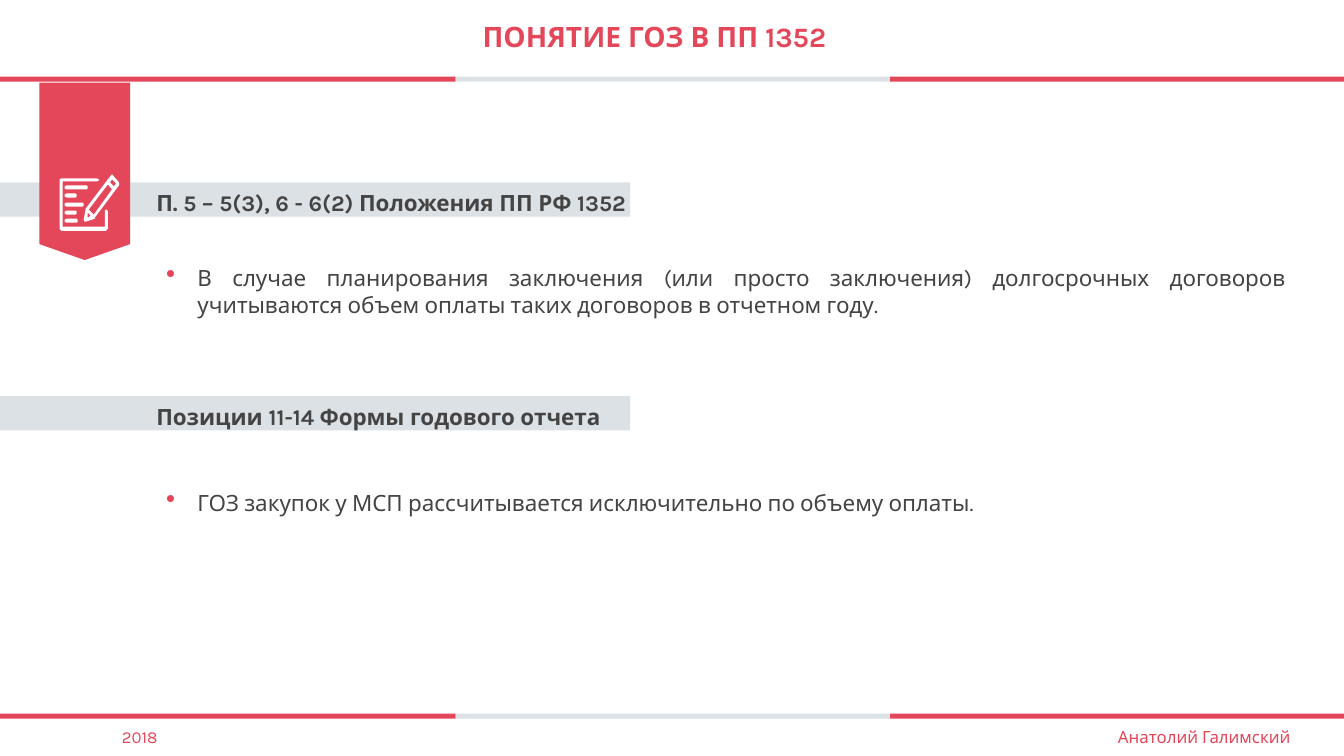
from lxml import etree
from pptx import Presentation
from pptx.dml.color import RGBColor
from pptx.enum.shapes import MSO_SHAPE as SHAPE
from pptx.enum.text import MSO_ANCHOR as ANCHOR, PP_ALIGN as ALIGN
from pptx.oxml.ns import qn
from pptx.util import Inches, Pt

RED = RGBColor(0xE4, 0x46, 0x5A)
GREY = RGBColor(0xDB, 0xE1, 0xE4)
DARK = RGBColor(0x44, 0x44, 0x44)
WHITE = RGBColor(0xFF, 0xFF, 0xFF)

W, H = 13.33, 7.5
STRIPE_EDGES = [0, 4.52, 8.83, W]
STRIPE_TOPS = [0.76, 7.08]
TEXT_LEFT = 1.55
FOOTER_W = 2.77

prs = Presentation()
prs.slide_width, prs.slide_height = Inches(W), Inches(H)
s = prs.slides.add_slide(prs.slide_layouts[6])


def paint(sp, color):
    sp.shadow.inherit = False
    sp.fill.solid()
    sp.fill.fore_color.rgb = color
    sp.line.fill.background()
    return sp


def add_text(box, text, size, color, bold=False, align=ALIGN.LEFT, inset=True):
    """Add a one-paragraph text box; box is left, top, width, height in inches."""
    tf = s.shapes.add_textbox(*map(Inches, box)).text_frame
    tf.word_wrap = True
    if not inset:
        tf.margin_left = tf.margin_top = tf.margin_right = tf.margin_bottom = 0
    p = tf.paragraphs[0]
    p.text, p.alignment = text, align
    p.font.name, p.font.size, p.font.bold = "Karla", Pt(size), bold
    p.font.color.rgb = color
    return tf


# Striped rules above and below the content
for top in STRIPE_TOPS:
    for left, right, color in zip(STRIPE_EDGES, STRIPE_EDGES[1:], [RED, GREY, RED]):
        paint(s.shapes.add_shape(SHAPE.RECTANGLE, Inches(left), Inches(top),
                                 Inches(right - left), Inches(0.05)), color)

# Headings on grey bands, each followed by a bullet
sections = [
    (1.81, "П. 5 – 5(3), 6 - 6(2) Положения ПП РФ 1352", 2.57, 1.08,
     "В случае планирования заключения (или просто заключения) долгосрочных "
     "договоров учитываются объем оплаты таких договоров в отчетном году."),
    (3.93, "Позиции 11-14 Формы годового отчета", 4.8, 0.37,
     "ГОЗ закупок у МСП рассчитывается исключительно по объему оплаты."),
]
for band_top, heading, bullet_top, bullet_h, bullet in sections:
    paint(s.shapes.add_shape(SHAPE.RECTANGLE, 0, Inches(band_top),
                             Inches(6.25), Inches(0.34)), GREY)
    add_text((TEXT_LEFT, band_top + 0.07, 4.85, 0.27), heading, 16, DARK,
             bold=True, inset=False)
    tf = add_text((TEXT_LEFT, bullet_top, 11.31, bullet_h), bullet, 16, DARK,
                  align=ALIGN.JUSTIFY)
    pPr = tf.paragraphs[0]._p.get_or_add_pPr()
    pPr.set("marL", str(Inches(0.31)))
    pPr.set("indent", str(-Inches(0.31)))
    marks = [etree.Element(qn(tag)) for tag in ("a:buClr", "a:buSzPct", "a:buChar")]
    etree.SubElement(marks[0], qn("a:srgbClr")).set("val", str(RED))
    marks[1].set("val", "120000")
    marks[2].set("char", "•")
    for i, mark in enumerate(marks):
        pPr.insert(i, mark)

# Ribbon hanging from the top rule
ribbon = paint(s.shapes.add_shape(SHAPE.PENTAGON, Inches(-0.04), Inches(1.25),
                                  Inches(1.76), Inches(0.9)), RED)
ribbon.adjustments[0] = 0.175
ribbon.rotation = 90

# Notepad and pencil icon, in hundredths of an inch
frame = [(96, 177), (98, 178), (98, 179), (96, 180), (62, 180), (62, 225),
         (104, 225), (104, 209), (105, 208), (106, 208), (107, 210), (107, 227),
         (105, 229), (61, 229), (59, 227), (59, 178), (61, 177)]
pencil = [(112, 174), (118, 181), (118, 184), (94, 216), (94, 217), (85, 220),
          (84, 220), (83, 218), (85, 207), (110, 174), (111, 173)]
pencil_holes = [[(88, 208), (93, 213), (111, 188), (107, 183)],
                [(90, 214), (87, 211), (87, 216)],
                [(115, 182), (111, 178), (109, 181), (113, 185)]]
text_lines = [[(66, y), (x, y), (x + 1, y + 1), (x + 1, y + 3), (x, y + 4),
               (66, y + 4), (64, y + 3), (64, y + 1)]
              for y, x in [(184, 86), (192, 75), (201, 82), (209, 75), (217, 76)]]

fb = s.shapes.build_freeform(*frame[0], scale=Inches(0.01))
fb.add_line_segments(frame[1:], close=True)
for contour in [pencil, *pencil_holes, *text_lines]:
    fb.move_to(*contour[0])
    fb.add_line_segments(contour[1:], close=True)
paint(fb.convert_to_shape(), WHITE)

# Title and footer
title = add_text((1.97, 0, 9.04, STRIPE_TOPS[0]), "ПОНЯТИЕ ГОЗ В ПП 1352", 20, RED,
                 bold=True, align=ALIGN.CENTER)
title.vertical_anchor = ANCHOR.MIDDLE
title.paragraphs[0].line_spacing = 0.9
for left, text in [(0, "2018"), (W - FOOTER_W, "Анатолий Галимский")]:
    add_text((left, 7.16, FOOTER_W, 0.3), text, 12, RED, align=ALIGN.CENTER)

prs.save("out.pptx")
